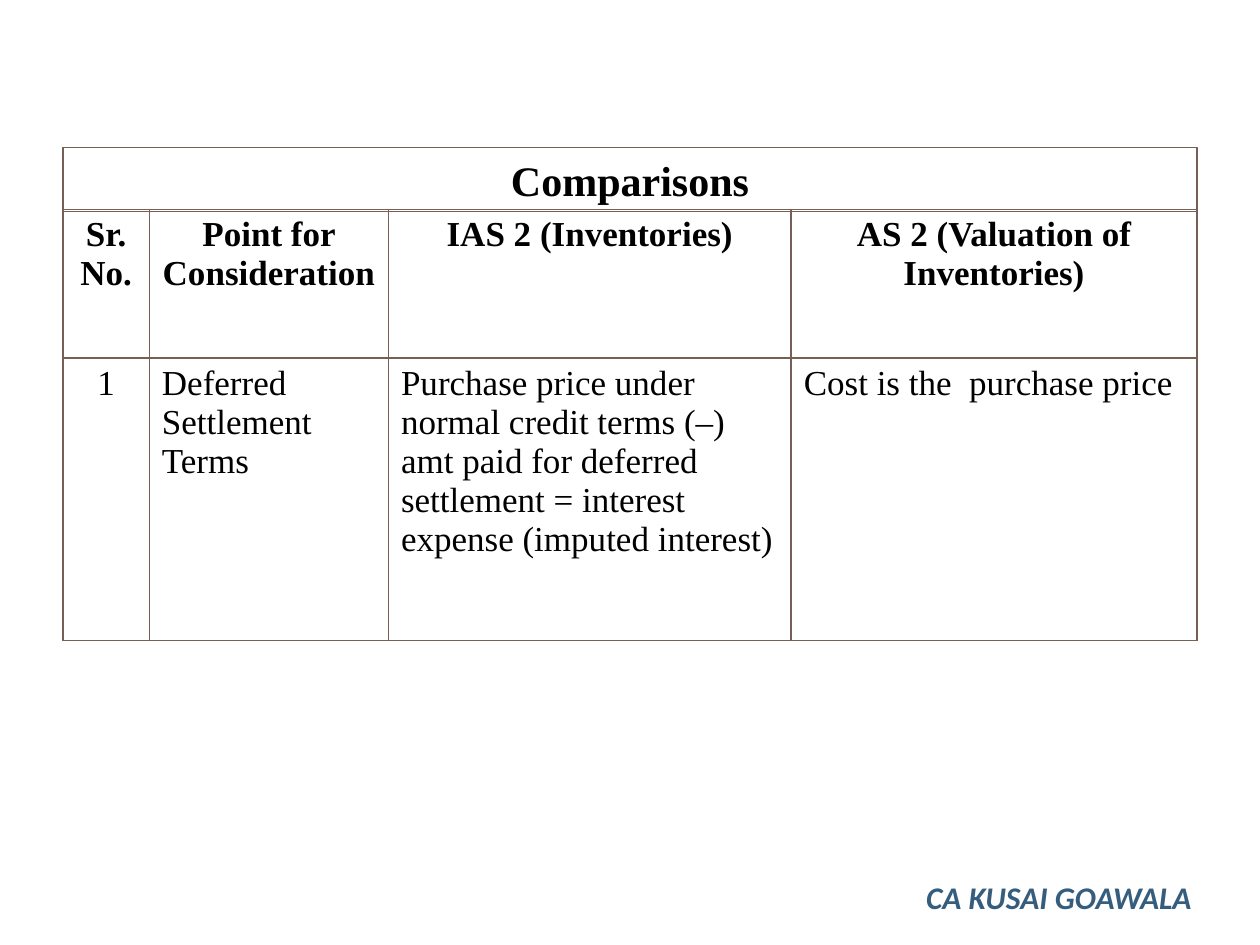
from lxml.etree import SubElement
from pptx import Presentation
from pptx.dml.color import RGBColor
from pptx.enum.text import MSO_ANCHOR, MSO_AUTO_SIZE, PP_ALIGN
from pptx.oxml.ns import qn
from pptx.util import Cm, Pt

SERIF = "Times New Roman"
BROWN = "775F55"
COLUMN_WIDTHS = [1.74, 4.82, 8.12, 8.18]
ROW_HEIGHTS = [3.0, 5.69]
COMPARISON_ROWS = [
    ["Sr. No.", "Point for Consideration", "IAS 2 (Inventories)",
     "AS 2 (Valuation of Inventories)"],
    ["1", "Deferred Settlement Terms",
     "Purchase price under normal credit terms (–) amt paid for deferred "
     "settlement = interest expense (imputed interest)",
     "Cost is the  purchase price"],
]


def color(value):
    return RGBColor.from_string(value)


def write_text(text_frame, text, size=20, font=SERIF, fill="000000",
               bold=False, italic=False, align=PP_ALIGN.LEFT):
    paragraph = text_frame.paragraphs[0]
    paragraph.alignment = align
    run = paragraph.add_run()
    run.text = text
    run.font.name = font
    run.font.size = Pt(size)
    run.font.bold = bold
    run.font.italic = italic
    run.font.color.rgb = color(fill)


def set_borders(cell, line_color, width):
    properties = cell._tc.get_or_add_tcPr()
    for side in ("a:lnL", "a:lnR", "a:lnT", "a:lnB"):
        line = SubElement(properties, qn(side), w=str(Pt(width)))
        fill = SubElement(line, qn("a:solidFill"))
        SubElement(fill, qn("a:srgbClr"), val=line_color)


def add_title(slide, left, top, width, height):
    title = slide.shapes.title
    title.left, title.top = Cm(left), Cm(top)
    title.width, title.height = Cm(width), Cm(height)
    title.line.color.rgb = color(BROWN)
    title.line.width = Pt(0.75)
    text_frame = title.text_frame
    text_frame.word_wrap = True
    text_frame.auto_size = MSO_AUTO_SIZE.NONE
    text_frame.vertical_anchor = MSO_ANCHOR.MIDDLE
    write_text(text_frame, "Comparisons", size=24, bold=True,
               align=PP_ALIGN.CENTER)


def add_comparison_table(slide, left, top):
    table = slide.shapes.add_table(
        len(ROW_HEIGHTS), len(COLUMN_WIDTHS), Cm(left), Cm(top),
        Cm(sum(COLUMN_WIDTHS)), Cm(sum(ROW_HEIGHTS))).table
    table.horz_banding = False
    for column, width in zip(table.columns, COLUMN_WIDTHS):
        column.width = Cm(width)
    for row, height in zip(table.rows, ROW_HEIGHTS):
        row.height = Cm(height)

    # Header row and number column are centred
    for row_index, row_texts in enumerate(COMPARISON_ROWS):
        for column_index, text in enumerate(row_texts):
            cell = table.cell(row_index, column_index)
            is_header = row_index == 0
            centred = is_header or column_index == 0
            set_borders(cell, BROWN, 1)
            cell.fill.background()
            write_text(cell.text_frame, text, bold=is_header,
                       align=PP_ALIGN.CENTER if centred else PP_ALIGN.LEFT)


def add_author(slide, left, top, width, height):
    box = slide.shapes.add_textbox(Cm(left), Cm(top), Cm(width), Cm(height))
    box.text_frame.word_wrap = True
    write_text(box.text_frame, "CA KUSAI GOAWALA", size=18, font="Calibri",
               fill="355D7E", bold=True, italic=True)


def main():
    presentation = Presentation()
    presentation.slide_width, presentation.slide_height = Cm(25.4), Cm(19.05)
    slide = presentation.slides.add_slide(presentation.slide_layouts[5])
    slide.background.fill.solid()
    slide.background.fill.fore_color.rgb = color("FFFFFF")

    add_title(slide, 1.27, 2.97, sum(COLUMN_WIDTHS), 1.3)
    add_comparison_table(slide, 1.27, 4.22)
    add_author(slide, 18.42, 17.58, 6.55, 1.02)
    presentation.save("out.pptx")


if __name__ == "__main__":
    main()
